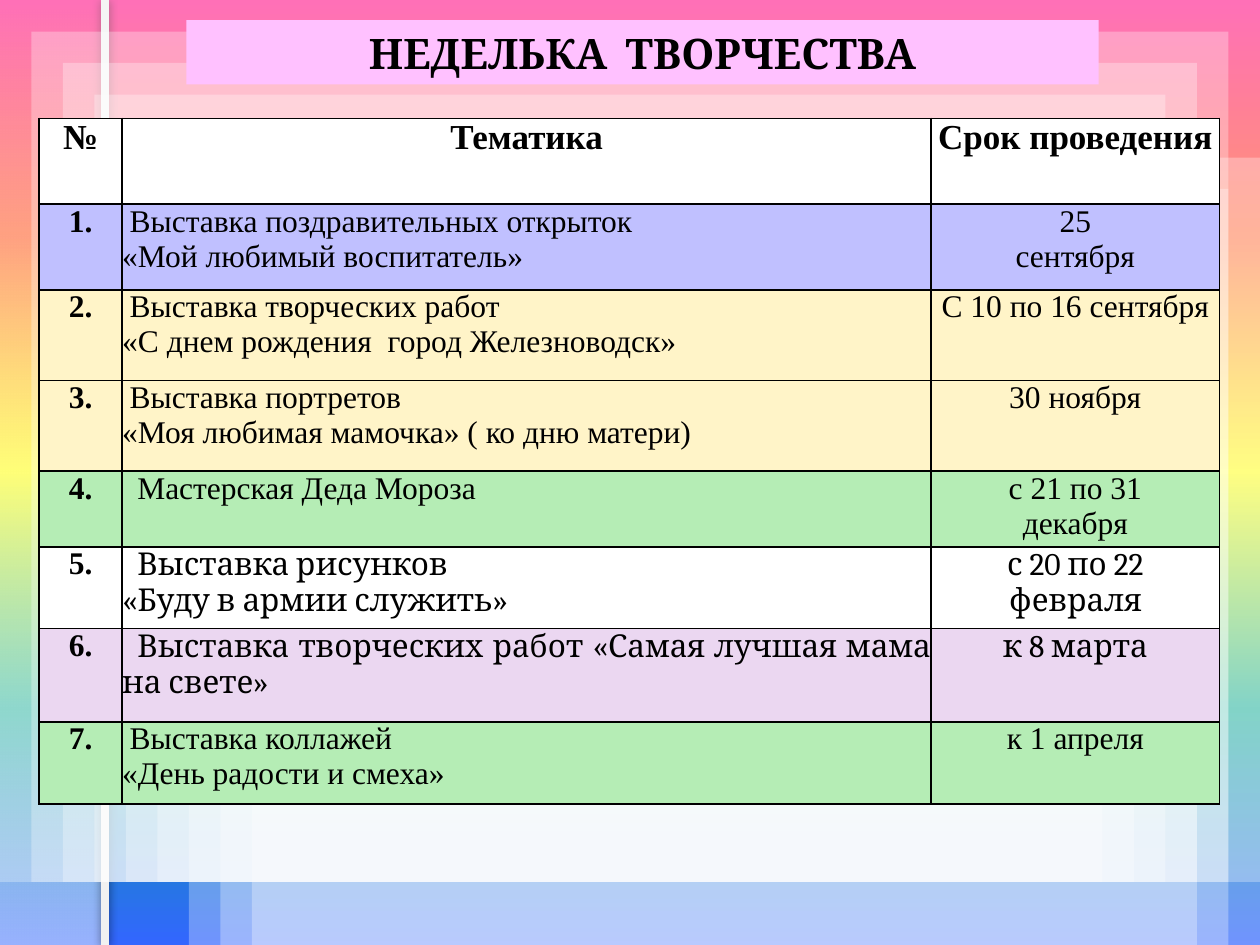
"""Build the creative week slide: a rainbow backdrop, a title and a schedule."""
from lxml import etree
from pptx import Presentation, util as u
from pptx.dml.color import RGBColor
from pptx.enum import shapes, text
from pptx.oxml import ns

WIDE, HIGH = 10, 7.5
STEP = 0.25
SPACE = 0.06
HUES = {
    "ink": "000000", "white": "FFFFFF", "title": "FFC1FF", "rail": "F1F1F1",
    "blue": "C0C0FF", "cream": "FFF4C8", "green": "B5EDB5", "lilac": "EBD7F1",
}
RAINBOW = ["FF3399", "FF6633", "FFFF00", "01A78F", "3366FF"]
SERIF, BOOK = "Times New Roman", "Cambria"
COLS = [0.66, 6.42, 2.29]
HEAD = ["№", "Тематика", "Срок проведения"]
ROWS = [
    (0.68, "blue", SERIF, 1, ["Выставка поздравительных открыток", "«Мой любимый воспитатель»"],
     ["25", "сентября"]),
    (0.72, "cream", SERIF, 1, ["Выставка творческих работ", "«С днем рождения  город Железноводск»"],
     ["С 10 по 16 сентября"]),
    (0.72, "cream", SERIF, 1, ["Выставка портретов", "«Моя любимая мамочка» ( ко дню матери)"],
     ["30 ноября"]),
    (0.6, "green", SERIF, 2, ["Мастерская Деда Мороза"], ["с 21 по 31", "декабря"]),
    (0.65, "white", BOOK, 2, ["Выставка рисунков", "«Буду в армии служить»"],
     ["с 20 по 22", "февраля"]),
    (0.74, "lilac", BOOK, 2, ["Выставка творческих работ «Самая лучшая мама на свете»"],
     ["к 8 марта"]),
    (0.65, "green", SERIF, 1, ["Выставка коллажей", "«День радости и смеха»"], ["к 1 апреля"]),
]


def tag(parent, name, **attrs):
    """Append a drawing element with the given attributes."""
    node = etree.SubElement(parent, ns.qn(name))
    for key, val in attrs.items():
        node.set(key, str(val))
    return node


def tint(parent, hue, clear=100):
    """Append a colour with its opacity in percent."""
    node = tag(parent, "a:srgbClr", val=hue)
    if clear < 100:
        tag(node, "a:alpha", val=clear * 1000)


def blend(fill, owner, stops, angle):
    """Fill the owner with evenly spaced (hue, opacity) stops at an angle."""
    fill.gradient()
    grad = next(owner.iter(ns.qn("a:gradFill")))
    for child in list(grad):
        grad.remove(child)
    group = tag(grad, "a:gsLst")
    for i, (hue, clear) in enumerate(stops):
        tint(tag(group, "a:gs", pos=round(100000 * i / (len(stops) - 1))), hue, clear)
    tag(grad, "a:lin", ang=angle * 60000, scaled=0)


def panel(slide, left, top, wide, high):
    """Add a borderless rectangle that is 30 percent white."""
    box = slide.shapes.add_shape(
        shapes.MSO_SHAPE.RECTANGLE, *map(u.Inches, (left, top, wide, high)))
    box.shadow.inherit = False
    box.line.fill.background()
    box.fill.solid()
    box.fill.fore_color.rgb = RGBColor.from_string(HUES["white"])
    tag(next(box.element.spPr.iter(ns.qn("a:srgbClr"))), "a:alpha", val=30000)
    return box


def rail(slide, left):
    """Add the upright line with its soft shadow."""
    bar = slide.shapes.add_connector(
        shapes.MSO_CONNECTOR.STRAIGHT, u.Inches(left), 0, u.Inches(left), u.Inches(HIGH))
    bar.line.width = u.Pt(4.5)
    bar.line.color.rgb = RGBColor.from_string(HUES["rail"])
    glow = tag(bar.element.spPr, "a:effectLst")
    tint(tag(glow, "a:outerShdw", blurRad=u.Pt(5), dist=0, dir=0), HUES["ink"], 40)


def scene(slide):
    """Paint the rainbow and the stepped white panels."""
    back = slide.background.fill
    back.solid()
    blend(back, slide.element, [(hue, 100) for hue in RAINBOW], 90)
    for i in range(3):
        gap = i * STEP
        panel(slide, 1.5 + gap, 1.25 + gap, 8.5 - 2 * gap, 6.25 - gap)
    side = panel(slide, 0, 0, 0.85, HIGH)
    blend(side.fill, side.element.spPr, [(HUES["white"], 50), (HUES["white"], 0)], 270)
    rail(slide, 0.83)
    for i in range(6):
        gap = i * STEP
        panel(slide, gap, gap, WIDE - 2 * gap, 7 - gap)


def write(frame, lines, size=18, font=SERIF, bold=False, align="CENTER", indent=0):
    """Write one paragraph per line, indenting the first."""
    for i, line in enumerate(lines):
        para = frame.add_paragraph() if i else frame.paragraphs[0]
        para.alignment = getattr(text.PP_ALIGN, align)
        if indent and not i:
            para._p.get_or_add_pPr().set("indent", str(u.Inches(indent)))
        run = para.add_run()
        run.text = line
        run.font.size, run.font.name, run.font.bold = u.Pt(size), font, bold
        run.font.color.rgb = RGBColor.from_string(HUES["ink"])


def title(slide, words):
    """Place the title on its coloured band, above the panels."""
    head = slide.shapes.title
    head.left, head.top, head.width, head.height = map(u.Inches, (1.48, 0.16, 7.24, 0.51))
    head.fill.solid()
    head.fill.fore_color.rgb = RGBColor.from_string(HUES["title"])
    frame = head.text_frame
    frame.auto_size = text.MSO_AUTO_SIZE.NONE
    frame.vertical_anchor = text.MSO_ANCHOR.MIDDLE
    write(frame, [words], size=24, font=BOOK, bold=True)
    head.element.getparent().append(head.element)


def cell(box, hue, lines, **look):
    """Border, fill and write one table cell."""
    box.margin_left = box.margin_right = box.margin_top = box.margin_bottom = 0
    props = box._tc.get_or_add_tcPr()
    for edge in "LRTB":
        line = tag(props, f"a:ln{edge}", w=u.Pt(1))
        tint(tag(line, "a:solidFill"), HUES["ink"])
    box.fill.solid()
    box.fill.fore_color.rgb = RGBColor.from_string(HUES[hue])
    write(box.text_frame, lines, **look)


def plan(slide):
    """Add the schedule table."""
    highs = [0.68] + [row[0] for row in ROWS]
    frame = slide.shapes.add_table(
        len(highs), len(COLS),
        *map(u.Inches, (0.31, 0.94, sum(COLS), sum(highs))))
    table = frame.table
    table.first_row = table.horz_banding = False
    for col, wide in zip(table.columns, COLS):
        col.width = u.Inches(wide)
    for row, high in zip(table.rows, highs):
        row.height = u.Inches(high)
    for i, name in enumerate(HEAD):
        cell(table.cell(0, i), "white", [name], size=20, bold=True)
    for i, (_, hue, font, pad, theme, date) in enumerate(ROWS, 1):
        cell(table.cell(i, 0), hue, [f"{i}."], bold=True)
        cell(table.cell(i, 1), hue, theme, font=font, indent=pad * SPACE,
             align="JUSTIFY" if pad > 1 else "LEFT")
        cell(table.cell(i, 2), hue, date, font=font)


def main():
    """Build and save the slide."""
    deck = Presentation()
    deck.slide_width, deck.slide_height = u.Inches(WIDE), u.Inches(HIGH)
    slide = deck.slides.add_slide(deck.slide_layouts[5])
    scene(slide)
    title(slide, "НЕДЕЛЬКА  ТВОРЧЕСТВА")
    plan(slide)
    deck.save("out.pptx")


if __name__ == "__main__":
    main()
